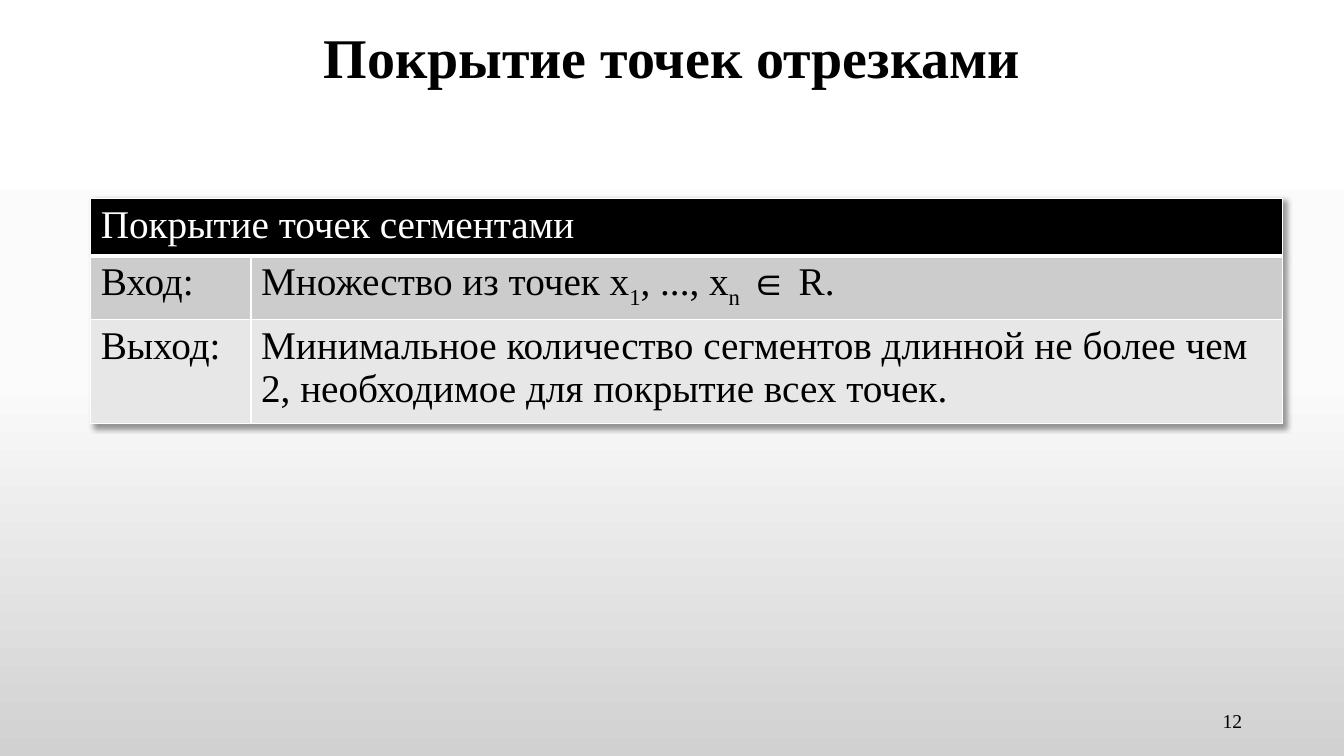
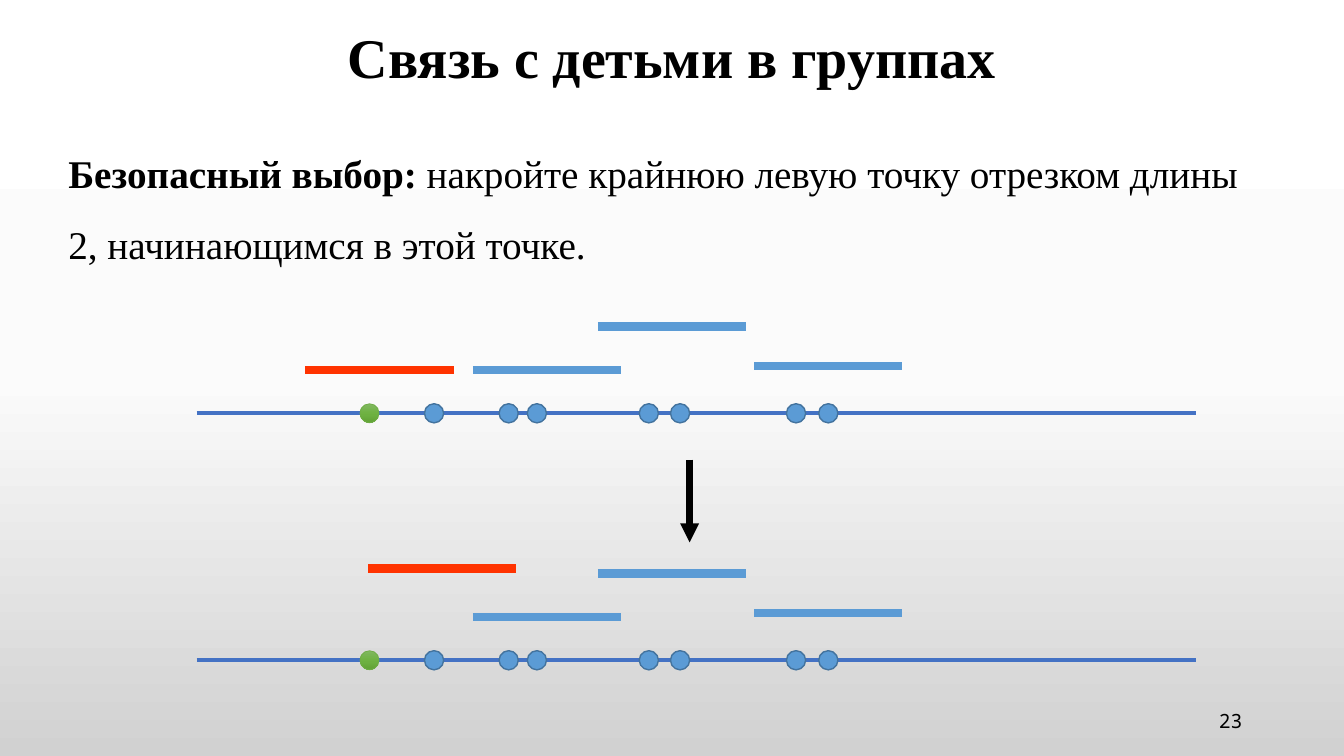
from lxml import etree
from pptx import Presentation
from pptx.dml.color import RGBColor
from pptx.enum import shapes, text
from pptx.oxml import ns
from pptx.util import Inches, Pt

SLIDE_W, SLIDE_H = 13.33, 7.5
SERIF, MONO = "Times New Roman", "Noto Sans Mono"
BLACK, WHITE = "000000", "FFFFFF"
BLUE, BLUE_EDGE, AXIS_BLUE, RED, GREEN_EDGE = "5B9BD5", "43739E", "4472C4", "FF3300", "70AD47"
PAGE_STOPS = ((0, WHITE), (50, "FBFBFB"), (100, "D1D1D1"))
GREEN_STOPS = ((0, "81B861"), (50, "6FB242"), (100, "62A336"))
HEADER_FILL, ROW_FILLS = BLACK, ("CCCCCC", "E7E7E7")

SEGMENT_LENGTH, DOT_SIZE = 1.47, 0.19
LEFTMOST_POINT = 3.57
OTHER_POINTS = (4.21, 4.95, 5.23, 6.34, 6.65, 7.8, 8.12)
# Left end and height above the axis
BLUE_SEGMENTS = ((4.69, 0.43), (5.93, 0.86), (7.48, 0.47))


def color(hex_code):
    return RGBColor.from_string(hex_code)


def add_xml(parent, tag, **attributes):
    return etree.SubElement(parent, ns.qn(tag), attributes)


def fill_gradient(fill, owner, stops):
    """Give the fill inside the owner element a gradient from top to bottom."""
    fill.gradient()
    fill.gradient_angle = 270
    stop_list = owner.find(".//" + ns.qn("a:gsLst"))
    for old_stop in list(stop_list):
        stop_list.remove(old_stop)
    for percent, hex_code in stops:
        stop = add_xml(stop_list, "a:gs", pos=str(percent * 1000))
        add_xml(stop, "a:srgbClr", val=hex_code)


def add_run(paragraph, words, size, hex_code=BLACK, font=SERIF, bold=False, baseline=0):
    run = paragraph.add_run()
    run.text = words
    run.font.size = Pt(size)
    run.font.name = font
    run.font.bold = bold
    run.font.color.rgb = color(hex_code)
    if baseline:
        run.font._element.set("baseline", str(baseline * 1000))


def add_textbox(slide, box, anchor=text.MSO_ANCHOR.MIDDLE, align=text.PP_ALIGN.LEFT, spacing=1.0):
    """Add an empty text box and return its first paragraph."""
    frame = slide.shapes.add_textbox(*map(Inches, box)).text_frame
    frame.word_wrap = True
    frame.vertical_anchor = anchor
    paragraph = frame.paragraphs[0]
    paragraph.alignment = align
    paragraph.line_spacing = spacing
    return paragraph


def add_page(prs, title, number, number_font):
    """Add a slide with the shared background, title and page number."""
    slide = prs.slides.add_slide(prs.slide_layouts[6])
    fill_gradient(slide.background.fill, slide.element, PAGE_STOPS)
    heading = add_textbox(slide, (0, 0, SLIDE_W, 1.2), align=text.PP_ALIGN.CENTER, spacing=0.9)
    add_run(heading, title, 40, bold=True)
    page_number = add_textbox(slide, (9.42, 6.95, 3, 0.4), align=text.PP_ALIGN.RIGHT)
    add_run(page_number, str(number), 14, font=number_font)
    return slide


def add_line(slide, start, end, hex_code, width, arrow=False):
    line = slide.shapes.add_connector(shapes.MSO_CONNECTOR.STRAIGHT, *map(Inches, (*start, *end)))
    line.line.color.rgb = color(hex_code)
    line.line.width = Pt(width)
    properties = line.element.spPr
    if arrow:
        add_xml(properties.find(ns.qn("a:ln")), "a:tailEnd", type="triangle")
    add_xml(properties, "a:effectLst")


def add_point(slide, left, axis_y, leftmost=False):
    point = slide.shapes.add_shape(
        shapes.MSO_SHAPE.OVAL,
        *map(Inches, (left, axis_y - DOT_SIZE / 2, DOT_SIZE, DOT_SIZE)))
    point.shadow.inherit = False
    if leftmost:
        fill_gradient(point.fill, point.element, GREEN_STOPS)
    else:
        point.fill.solid()
        point.fill.fore_color.rgb = color(BLUE)
    point.line.color.rgb = color(GREEN_EDGE if leftmost else BLUE_EDGE)
    point.line.width = Pt(0.5 if leftmost else 1)


def style_cell(cell, fill, bottom_width=1, top_width=1):
    properties = cell._tc.get_or_add_tcPr()
    for side, width in (("L", 1), ("R", 1), ("T", top_width), ("B", bottom_width)):
        border = add_xml(properties, "a:ln" + side, w=str(Pt(width)))
        add_xml(add_xml(border, "a:solidFill"), "a:srgbClr", val=WHITE)
    cell.fill.solid()
    cell.fill.fore_color.rgb = color(fill)


def add_table_shadow(table):
    effects = etree.Element(ns.qn("a:effectLst"))
    shadow = add_xml(effects, "a:outerShdw", blurRad=str(Pt(4)), dist=str(Pt(3)),
                     dir="2700000", algn="tl", rotWithShape="0")
    add_xml(add_xml(shadow, "a:srgbClr", val=BLACK), "a:alpha", val="40000")
    table._tbl.tblPr.insert(0, effects)


def add_problem_table(slide, left, top, width):
    """Add the statement of the problem: a header above its input and output."""
    label_width, heights = 1.59, (0.52, 0.59, 0.97)
    table = slide.shapes.add_table(
        3, 2, *map(Inches, (left, top, width, sum(heights)))).table
    table.first_row = table.horz_banding = False
    for column, column_width in zip(table.columns, (label_width, width - label_width)):
        column.width = Inches(column_width)
    for row, height in zip(table.rows, heights):
        row.height = Inches(height)
    add_table_shadow(table)

    header = table.cell(0, 0)
    header.merge(table.cell(0, 1))
    for column in range(2):
        style_cell(table.cell(0, column), HEADER_FILL, bottom_width=3)
    add_run(header.text_frame.paragraphs[0], "Покрытие точек сегментами", 28, WHITE)

    statement = (
        ("Вход:", (("Множество из точек x", 0), ("1", -25), (", ..., x", 0),
                   ("n", -25), (" ∈ R.", 0))),
        ("Выход:", (("Минимальное количество сегментов длинной не более чем 2, "
                     "необходимое для покрытие всех точек.", 0),)),
    )
    for row, ((label, content), fill) in enumerate(zip(statement, ROW_FILLS), 1):
        for column, runs in enumerate((((label, 0),), content)):
            cell = table.cell(row, column)
            style_cell(cell, fill, top_width=3 if row == 1 else 1)
            for words, baseline in runs:
                add_run(cell.text_frame.paragraphs[0], words, 28, baseline=baseline)


def add_covering(slide, left, axis_y, width, red_segment):
    """Add an axis with its points and the segments that cover them."""
    add_line(slide, (left, axis_y), (left + width, axis_y), AXIS_BLUE, 3)
    add_point(slide, LEFTMOST_POINT, axis_y, leftmost=True)
    for point_left in OTHER_POINTS:
        add_point(slide, point_left, axis_y)
    for index, (start, rise) in enumerate((red_segment, *BLUE_SEGMENTS)):
        y = axis_y - rise
        add_line(slide, (start, y), (start + SEGMENT_LENGTH, y), BLUE if index else RED, 6)


def build_problem_slide(prs):
    slide = add_page(prs, "Покрытие точек отрезками", 12, SERIF)
    add_problem_table(slide, 0.9, 1.97, 11.82)


def build_safe_choice_slide(prs):
    slide = add_page(prs, "Связь с детьми в группах", 23, MONO)
    rule = add_textbox(slide, (0.58, 1.2, 12.04, 1.44), text.MSO_ANCHOR.TOP, spacing=1.5)
    add_run(rule, "Безопасный выбор: ", 28, bold=True)
    add_run(rule, "накройте крайнюю левую точку отрезком длины 2, "
                  "начинающимся в этой точке.", 28)
    for axis_y, red_segment in ((4.1, (3.03, 0.43)), (6.55, (3.65, 0.91))):
        add_covering(slide, 1.95, axis_y, 9.91, red_segment)
    add_line(slide, (6.84, 4.56), (6.84, 5.38), BLACK, 4.5, arrow=True)


def main():
    prs = Presentation()
    prs.slide_width, prs.slide_height = Inches(SLIDE_W), Inches(SLIDE_H)
    build_problem_slide(prs)
    build_safe_choice_slide(prs)
    prs.save("out.pptx")


if __name__ == "__main__":
    main()
